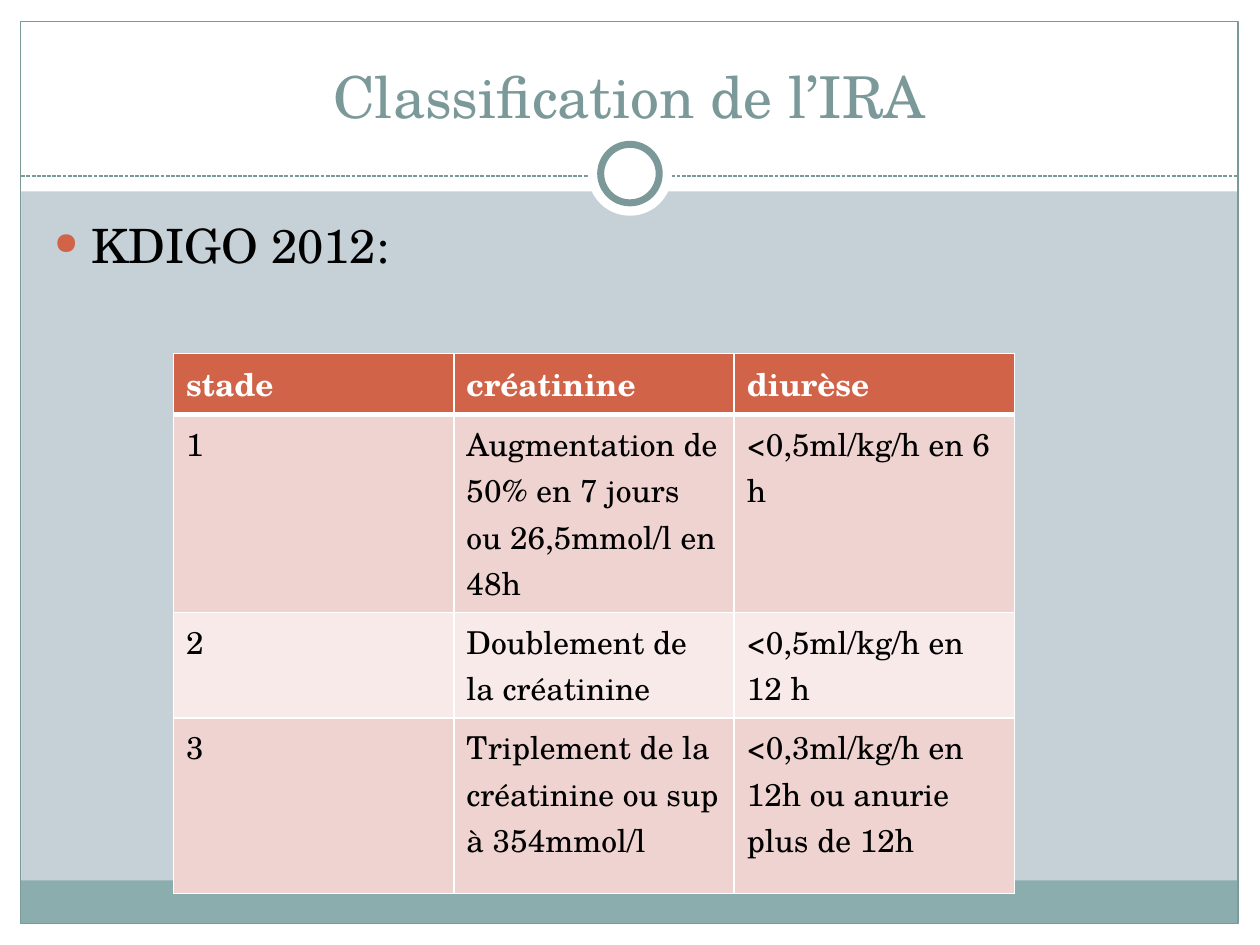
"""Build the slide on the KDIGO 2012 classification of acute kidney injury."""
from lxml.etree import SubElement
from pptx import Presentation
from pptx.dml.color import RGBColor
from pptx.enum.dml import MSO_LINE
from pptx.enum.shapes import MSO_CONNECTOR, MSO_SHAPE
from pptx.enum.text import MSO_ANCHOR, PP_ALIGN
from pptx.oxml.ns import qn
from pptx.util import Cm, Pt

FONT = "TeX Gyre Schola"
WHITE = RGBColor(0xFF, 0xFF, 0xFF)
BLACK = RGBColor(0x00, 0x00, 0x00)
BACKGROUND = RGBColor(0xC5, 0xD1, 0xD7)
TEAL = RGBColor(0x7C, 0x99, 0x9A)
FOOTER = RGBColor(0x8C, 0xAD, 0xAE)
ORANGE = RGBColor(0xD1, 0x63, 0x49)
DARK_BAND = RGBColor(0xEE, 0xD3, 0xD0)
LIGHT_BAND = RGBColor(0xF7, 0xEA, 0xE9)


def add_run(paragraph, text, size, color, bold=False):
    run = paragraph.add_run()
    run.text = text
    run.font.name = FONT
    run.font.size = Pt(size)
    run.font.bold = bold
    run.font.color.rgb = color


def add_plain_shape(kind, box, fill=None, line_width=None):
    shape = slide.shapes.add_shape(kind, *[Cm(length) for length in box])
    shape.shadow.inherit = False
    if fill is None:
        shape.fill.background()
    else:
        shape.fill.solid()
        shape.fill.fore_color.rgb = fill
    if line_width is None:
        shape.line.fill.background()
    else:
        shape.line.color.rgb = TEAL
        shape.line.width = Pt(line_width)


presentation = Presentation()
presentation.slide_width = Cm(25.4)
presentation.slide_height = Cm(19.05)
slide = presentation.slides.add_slide(presentation.slide_layouts[6])
slide.background.fill.solid()
slide.background.fill.fore_color.rgb = BACKGROUND

for box, fill in [
    ((0, 18.62, 25.4, 0.43), WHITE),
    ((0, 0, 25.4, 3.86), WHITE),
    ((0, 0, 0.43, 19.05), WHITE),
    ((24.97, 0, 0.43, 19.05), WHITE),
    ((0.41, 17.75, 24.54, 0.87), FOOTER),
]:
    add_plain_shape(MSO_SHAPE.RECTANGLE, box, fill)
add_plain_shape(MSO_SHAPE.RECTANGLE, (0.42, 0.43, 24.54, 18.19), line_width=0.75)

divider = slide.shapes.add_connector(
    MSO_CONNECTOR.STRAIGHT, Cm(0.43), Cm(3.55), Cm(24.97), Cm(3.55))
divider.line.color.rgb = TEAL
divider.line.width = Pt(0.75)
divider.line.dash_style = MSO_LINE.SQUARE_DOT
SubElement(divider._element.spPr, qn("a:effectLst"))

add_plain_shape(MSO_SHAPE.OVAL, (11.85, 2.65, 1.7, 1.7), WHITE)
add_plain_shape(MSO_SHAPE.OVAL, (12.11, 2.91, 1.18, 1.18), WHITE, 4)

title = slide.shapes.add_textbox(Cm(0.84), Cm(0.62), Cm(23.7), Cm(2.12))
title.text_frame.word_wrap = True
title.text_frame.vertical_anchor = MSO_ANCHOR.BOTTOM
paragraph = title.text_frame.paragraphs[0]
paragraph.alignment = PP_ALIGN.CENTER
add_run(paragraph, "Classification de l’IRA", 33, TEAL)

body = slide.shapes.add_textbox(Cm(0.84), Cm(4.24), Cm(23.62), Cm(12.7))
body.text_frame.word_wrap = True
paragraph = body.text_frame.paragraphs[0]
properties = paragraph._p.get_or_add_pPr()
properties.set("marL", str(Cm(0.76)))
properties.set("indent", str(-Cm(0.76)))
bullet_color = SubElement(properties, qn("a:buClr"))
SubElement(bullet_color, qn("a:srgbClr"), val=str(ORANGE))
SubElement(properties, qn("a:buSzPct"), val="65000")
SubElement(properties, qn("a:buChar"), char="●")
add_run(paragraph, "KDIGO 2012:", 27, BLACK)

rows = [
    ("stade", "créatinine", "diurèse"),
    ("1", "Augmentation de 50% en 7 jours ou 26,5mmol/l en 48h", "<0,5ml/kg/h en 6 h"),
    ("2", "Doublement de la créatinine", "<0,5ml/kg/h en 12 h"),
    ("3", "Triplement de la créatinine ou sup à 354mmol/l",
     "<0,3ml/kg/h en 12h ou anurie plus de 12h"),
]
row_heights = [1.23, 3.99, 2.12, 3.54]
row_fills = [ORANGE, DARK_BAND, LIGHT_BAND, DARK_BAND]
table = slide.shapes.add_table(
    len(rows), 3, Cm(3.5), Cm(7.13), Cm(16.95), Cm(sum(row_heights))).table
for column in table.columns:
    column.width = Cm(5.65)
for row_index, texts in enumerate(rows):
    is_header = row_index == 0
    table.rows[row_index].height = Cm(row_heights[row_index])
    for column_index, text in enumerate(texts):
        cell = table.cell(row_index, column_index)
        cell_properties = cell._tc.get_or_add_tcPr()
        for side in ("L", "R", "T", "B"):
            is_thick = (row_index, side) in ((0, "B"), (1, "T"))
            border = SubElement(cell_properties, qn(f"a:ln{side}"),
                                w=str(Pt(3 if is_thick else 1)))
            border_fill = SubElement(border, qn("a:solidFill"))
            SubElement(border_fill, qn("a:srgbClr"), val=str(WHITE))
        cell.fill.solid()
        cell.fill.fore_color.rgb = row_fills[row_index]
        add_run(cell.text_frame.paragraphs[0], text, 18,
                WHITE if is_header else BLACK, is_header)

presentation.save("out.pptx")
